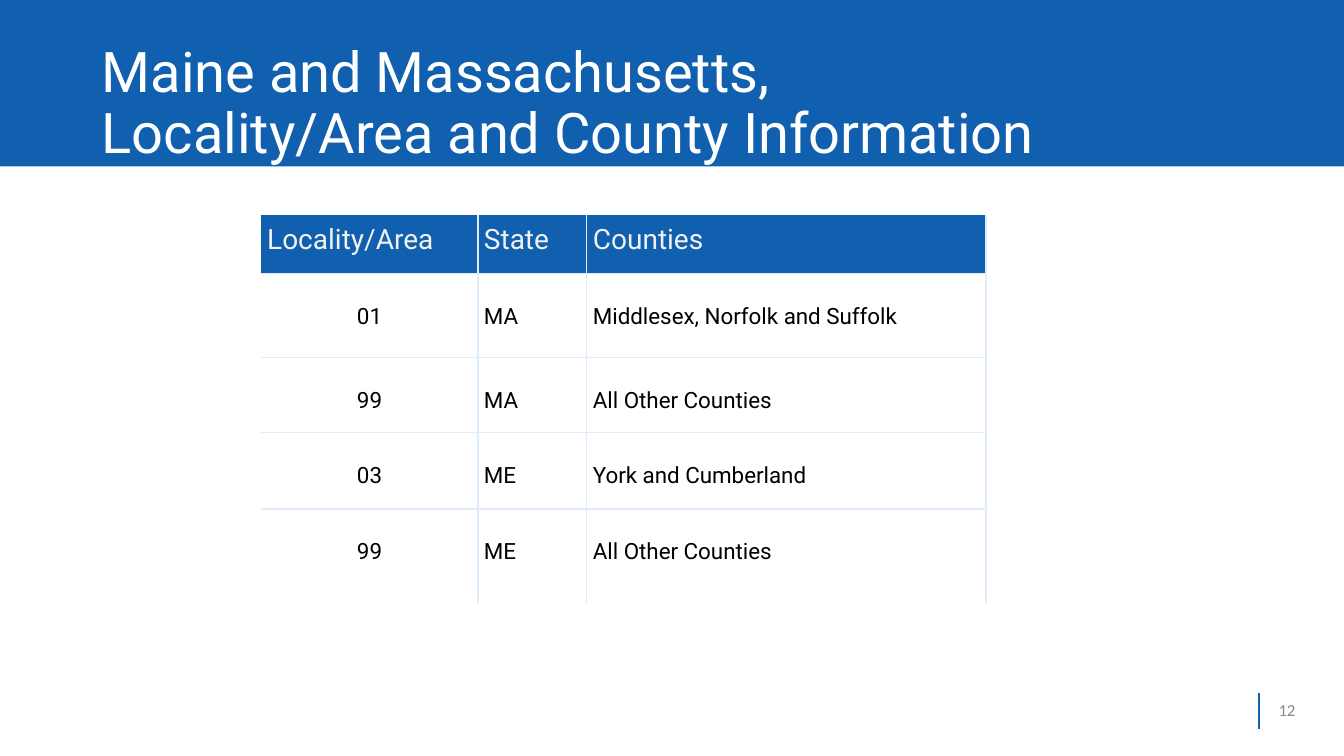
from lxml.etree import SubElement
from pptx import Presentation
from pptx.dml.color import RGBColor
from pptx.enum.shapes import MSO_CONNECTOR, MSO_SHAPE
from pptx.enum.text import MSO_ANCHOR, PP_ALIGN
from pptx.oxml import parse_xml
from pptx.oxml.ns import nsdecls, qn
from pptx.util import Inches, Pt

TITLE = "Maine and Massachusetts, Locality/Area and County Information"
PAGE_NUMBER = "12"
ROWS = [
    ("Locality/Area", "State", "Counties"),
    ("01", "MA", "Middlesex, Norfolk and Suffolk"),
    ("99", "MA", "All Other Counties"),
    ("03", "ME", "York and Cumberland"),
    ("99", "ME", "All Other Counties"),
]
COLUMN_WIDTHS = (2.15, 1.08, 3.96)
ROW_HEIGHTS = (0.58, 0.84, 0.74, 0.76, 0.93)
TABLE_LEFT, TABLE_TOP = 2.59, 2.13
WIDTH, HEIGHT = 13.33, 7.5
BAND_HEIGHT = 0.22 * HEIGHT

BLUE, GRID, WHITE = "115FAF", "DFECF9", "FFFFFF"
TITLE_FONT = dict(name="Roboto", size=Pt(40), color=WHITE)
HEADER_FONT = dict(name="Roboto", size=Pt(20), bold=False, color="F1F1F1")
BODY_FONT = dict(name="Roboto", size=Pt(16), bold=False, color="000000")
NUMBER_FONT = dict(name="Calibri", size=Pt(12), color="888888")


def rgb(value):
    return RGBColor.from_string(value)


def write(frame, text, font, top=0, left=0, align=PP_ALIGN.LEFT):
    """Fill a text frame or table cell with one formatted paragraph."""
    frame.margin_left, frame.margin_top = Inches(left), Inches(top)
    frame.margin_right = frame.margin_bottom = 0
    frame.vertical_anchor = MSO_ANCHOR.TOP
    para = getattr(frame, "text_frame", frame).paragraphs[0]
    para.alignment = align
    span = para.add_run()
    span.text = text
    for name, value in font.items():
        if name == "color":
            span.font.color.rgb = rgb(value)
        else:
            setattr(span.font, name, value)
    return para


def set_borders(cell, edges):
    """Draw grid lines on the edges marked true and clear the others."""
    properties = cell._tc.get_or_add_tcPr()
    for index, (side, shown) in enumerate(edges.items()):
        line = parse_xml(f'<a:ln{side} w="12700" {nsdecls("a")}/>')
        if shown:
            fill = SubElement(line, qn("a:solidFill"))
            SubElement(fill, qn("a:srgbClr"), val=GRID)
        else:
            SubElement(line, qn("a:noFill"))
        properties.insert(index, line)


def add_frame(page):
    """Add the title band and the rule beside the page number."""
    band = page.shapes.add_shape(MSO_SHAPE.RECTANGLE, 0, 0, Inches(WIDTH), Inches(BAND_HEIGHT))
    band.shadow.inherit = False
    band.fill.solid()
    band.fill.fore_color.rgb = rgb(BLUE)
    band.line.fill.background()
    page.shapes._spTree.insert(2, band._element)

    rule = page.shapes.add_connector(
        MSO_CONNECTOR.STRAIGHT, *map(Inches, (12.49, 6.88, 12.49, 7.23)))
    rule.line.color.rgb = rgb("125FB0")
    rule.line.width = Pt(1.25)
    SubElement(rule._element.spPr, qn("a:effectLst"))

    box = page.shapes.add_textbox(*map(Inches, (12.64, 6.97, 0.35, 0.19)))
    box.text_frame.word_wrap = True
    para = write(box.text_frame, PAGE_NUMBER, NUMBER_FONT, left=0.04)
    para.line_spacing = Pt(12.4)


def add_title(page):
    title = page.shapes.title
    title.left, title.top, title.width, title.height = map(Inches, (1, 0.34, 9.54, 1.29))
    title.text_frame.word_wrap = True
    para = write(title.text_frame, TITLE, TITLE_FONT, top=0.09, left=0.01)
    para.line_spacing = Pt(43.2)


def add_county_table(page):
    table = page.shapes.add_table(
        len(ROWS), len(COLUMN_WIDTHS), Inches(TABLE_LEFT), Inches(TABLE_TOP),
        Inches(sum(COLUMN_WIDTHS)), Inches(sum(ROW_HEIGHTS))).table
    table.horz_banding = False
    for column, width in zip(table.columns, COLUMN_WIDTHS):
        column.width = Inches(width)
    for r, (row, height) in enumerate(zip(ROWS, ROW_HEIGHTS)):
        table.rows[r].height = Inches(height)
        for c, text in enumerate(row):
            cell = table.cell(r, c)
            if r == 0:
                cell.fill.solid()
                cell.fill.fore_color.rgb = rgb(BLUE)
                write(cell, text, HEADER_FONT, top=0.09, left=0.06)
            else:
                cell.fill.background()
                centred = c == 0
                write(cell, text, BODY_FONT, top=0.3, left=0 if centred else 0.06,
                      align=PP_ALIGN.CENTER if centred else PP_ALIGN.LEFT)
            set_borders(cell, dict(L=c > 0, R=True, T=r > 0, B=r < len(ROWS) - 1))


def main():
    deck = Presentation()
    deck.slide_width, deck.slide_height = Inches(WIDTH), Inches(HEIGHT)
    page = deck.slides.add_slide(deck.slide_layouts[5])
    add_frame(page)
    add_title(page)
    add_county_table(page)
    deck.save("out.pptx")


if __name__ == "__main__":
    main()
